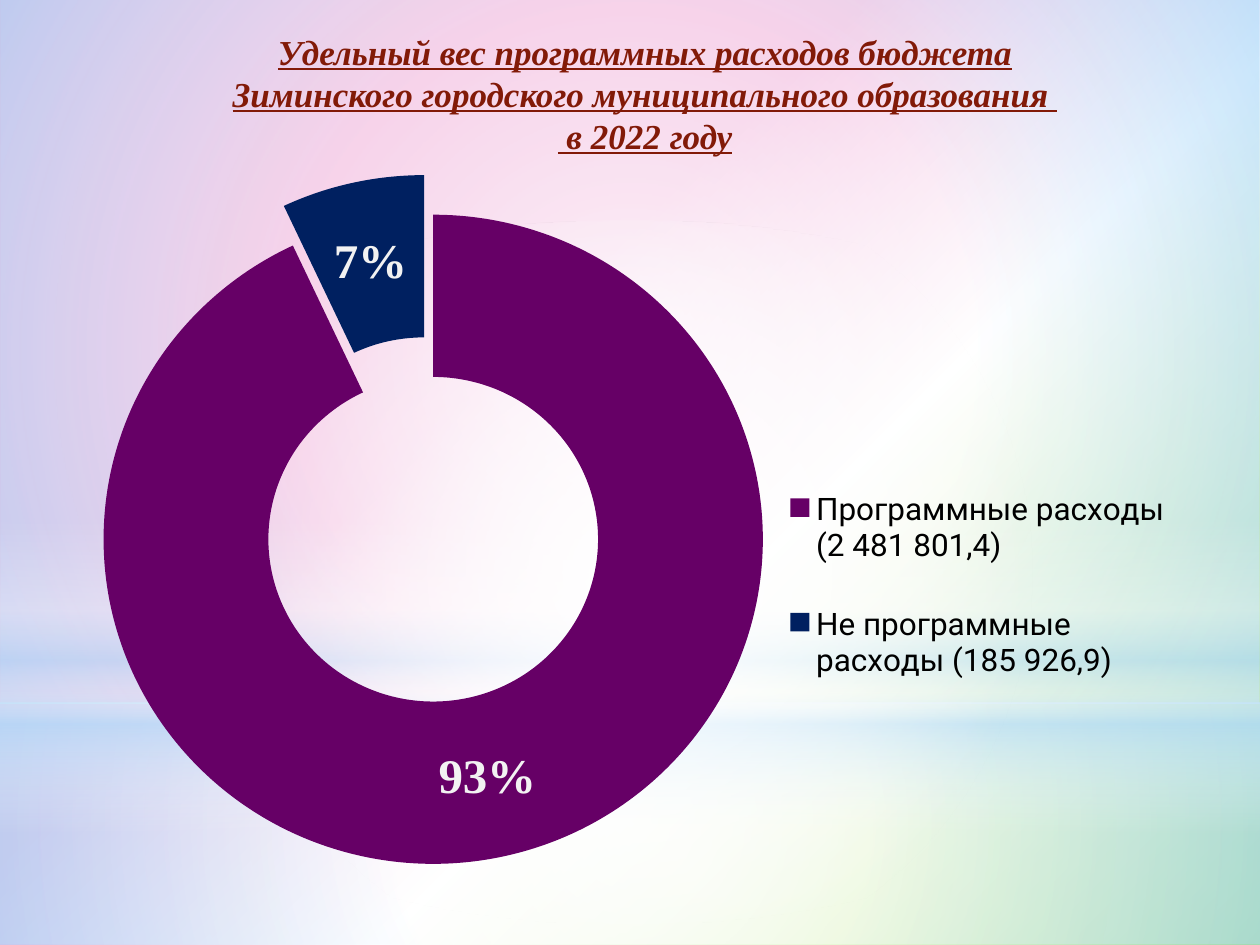
import pptx
import pptx.chart.data
import pptx.dml.color
import pptx.enum.chart
import pptx.enum.shapes
import pptx.enum.text
import pptx.oxml
import pptx.oxml.ns
import pptx.util

RGBColor = pptx.dml.color.RGBColor
WHITE = RGBColor(0xFF, 0xFF, 0xFF)
SKY = RGBColor(0xB4, 0xDC, 0xFA)
PINK = RGBColor(0xEA, 0x8A, 0xC8)
GREEN = RGBColor(0x81, 0xD3, 0x1A)
BROWN = RGBColor(0x82, 0x1A, 0x08)
PURPLE = RGBColor(0x66, 0x00, 0x66)
NAVY = RGBColor(0x00, 0x20, 0x60)
BLACK = RGBColor(0x00, 0x00, 0x00)
LABEL_GREY = RGBColor(0xF2, 0xF2, 0xF2)
SERIF = "Times New Roman"

presentation = pptx.Presentation()
presentation.slide_width = pptx.util.Inches(10)
presentation.slide_height = pptx.util.Inches(7.5)
slide = presentation.slides.add_slide(presentation.slide_layouts[6])


def box(left, top, width, height):
    """Turn percentages of the slide's size into lengths."""
    across, down = presentation.slide_width / 100, presentation.slide_height / 100
    return [int(left * across), int(top * down), int(width * across), int(height * down)]


def set_gradient(element, stops, angle=None):
    """Rewrite the first gradient in element from (position, colour, opacity) stops.

    Without an angle the gradient runs outwards from the centre.
    """
    gradient = element.find(".//" + pptx.oxml.ns.qn("a:gradFill"))
    stop_xml = "".join(
        f'<a:gs pos="{position * 1000}"><a:srgbClr val="{colour}">'
        f'<a:alpha val="{opacity * 1000}"/></a:srgbClr></a:gs>'
        for position, colour, opacity in stops)
    if angle is None:
        direction = ('<a:path path="circle"><a:fillToRect l="50000" t="50000" '
                     'r="50000" b="50000"/></a:path>')
    else:
        direction = f'<a:lin ang="{angle * 60000}" scaled="0"/>'
    gradient.getparent().replace(gradient, pptx.oxml.parse_xml(
        f'<a:gradFill {pptx.oxml.ns.nsdecls("a")} rotWithShape="1">'
        f'<a:gsLst>{stop_xml}</a:gsLst>{direction}</a:gradFill>'))


# Background and its translucent layers
slide.background.fill.gradient()
set_gradient(slide._element,
             [(0, PINK, 100), (39, PINK, 100), (60, WHITE, 100), (100, GREEN, 100)], 45)

RECTANGLE = pptx.enum.shapes.MSO_SHAPE.RECTANGLE
OVAL = pptx.enum.shapes.MSO_SHAPE.OVAL
layers = [
    (RECTANGLE, box(0, 74.4, 100, 25.6),
     [(0, WHITE, 91), (37, WHITE, 76), (100, SKY, 79)], None),
    (RECTANGLE, box(0, 0, 100, 74.4),
     [(0, WHITE, 89), (48, WHITE, 62), (100, SKY, 79)], None),
    (RECTANGLE, box(0, 54.93, 100, 33.33),
     [(0, WHITE, 0), (29, WHITE, 30), (45, SKY, 40), (55, WHITE, 26),
      (65, SKY, 60), (100, WHITE, 0)], 90),
    (OVAL, box(0, 23.33, 100, 74.4), [(0, WHITE, 100), (56, WHITE, 0)], None),
]
for kind, place, stops, angle in layers:
    layer = slide.shapes.add_shape(kind, *place)
    layer.shadow.inherit = False
    layer.line.fill.background()
    layer.fill.gradient()
    set_gradient(layer._element, stops, angle)

# Title
title = slide.shapes.add_shape(pptx.enum.shapes.MSO_SHAPE.ROUNDED_RECTANGLE,
                               *box(13.3, 4.13, 75.8, 11.47))
title.shadow.inherit = False
title.fill.background()
title.line.fill.background()
frame = title.text_frame
frame.word_wrap = True
frame.vertical_anchor = pptx.enum.text.MSO_ANCHOR.MIDDLE
title_lines = [
    "Удельный вес программных расходов бюджета Зиминского городского муниципального образования ",
    " в 2022 году",
]
for index, line in enumerate(title_lines):
    paragraph = frame.add_paragraph() if index else frame.paragraphs[0]
    paragraph.alignment = pptx.enum.text.PP_ALIGN.CENTER
    run = paragraph.add_run()
    run.text = line
    run.font.name = SERIF
    run.font.size = pptx.util.Pt(20)
    run.font.bold = run.font.italic = run.font.underline = True
    run.font.color.rgb = BROWN

# Doughnut chart
chart_data = pptx.chart.data.CategoryChartData()
chart_data.categories = ["Программные расходы (2 481 801,4)",
                         "Не программные расходы (185 926,9)"]
chart_data.add_series("Series 1", [93, 7])
chart = slide.shapes.add_chart(pptx.enum.chart.XL_CHART_TYPE.DOUGHNUT,
                               *box(2.8, 18.53, 92.9, 76.67), chart_data).chart
chart.has_title = False
chart.font.name = "Roboto"
chart.font.size = pptx.util.Pt(18)
chart.font.color.rgb = BLACK
chart.has_legend = True
chart.legend.position = pptx.enum.chart.XL_LEGEND_POSITION.RIGHT
chart.legend.include_in_layout = False

plot = chart.plots[0]
plot.vary_by_categories = True
plot._element.find(pptx.oxml.ns.qn("c:holeSize")).set("val", "50")
series = plot.series[0]
for index, colour in enumerate([PURPLE, NAVY]):
    point = series.points[index]
    point.format.fill.solid()
    point.format.fill.fore_color.rgb = colour
    point.format.line.fill.background()

# Pull out the small slice
small_slice = series._element.findall(pptx.oxml.ns.qn("c:dPt"))[1]
small_slice.find(pptx.oxml.ns.qn("c:spPr")).addprevious(pptx.oxml.parse_xml(
    f'<c:explosion {pptx.oxml.ns.nsdecls("c")} val="25"/>'))

labels = series.data_labels
labels.show_percentage = True
labels.show_value = False
labels.number_format = "0%"
labels.number_format_is_linked = False
labels.font.name = SERIF
labels.font.size = pptx.util.Pt(28)
labels.font.bold = True
labels.font.color.rgb = LABEL_GREY

# Fixed places of ring and legend, as shares of the chart
plot_area = chart._chartSpace.chart.plotArea
legend = chart.legend._element
for owner, target, place in [(plot_area, "inner", (0.04, 0.04, 0.6, 0.91)),
                             (legend, None, (0.63, 0.37, 0.35, 0.38))]:
    for old in owner.findall(pptx.oxml.ns.qn("c:layout")):
        owner.remove(old)
    target_xml = f'<c:layoutTarget val="{target}"/>' if target else ""
    modes = "".join(f'<c:{axis}Mode val="edge"/>' for axis in "xy")
    sizes = "".join(f'<c:{side} val="{share}"/>' for side, share in zip("xywh", place))
    layout = pptx.oxml.parse_xml(
        f'<c:layout {pptx.oxml.ns.nsdecls("c")}><c:manualLayout>'
        f'{target_xml}{modes}{sizes}</c:manualLayout></c:layout>')
    owner.insert(0 if target else 1, layout)

presentation.save("out.pptx")
